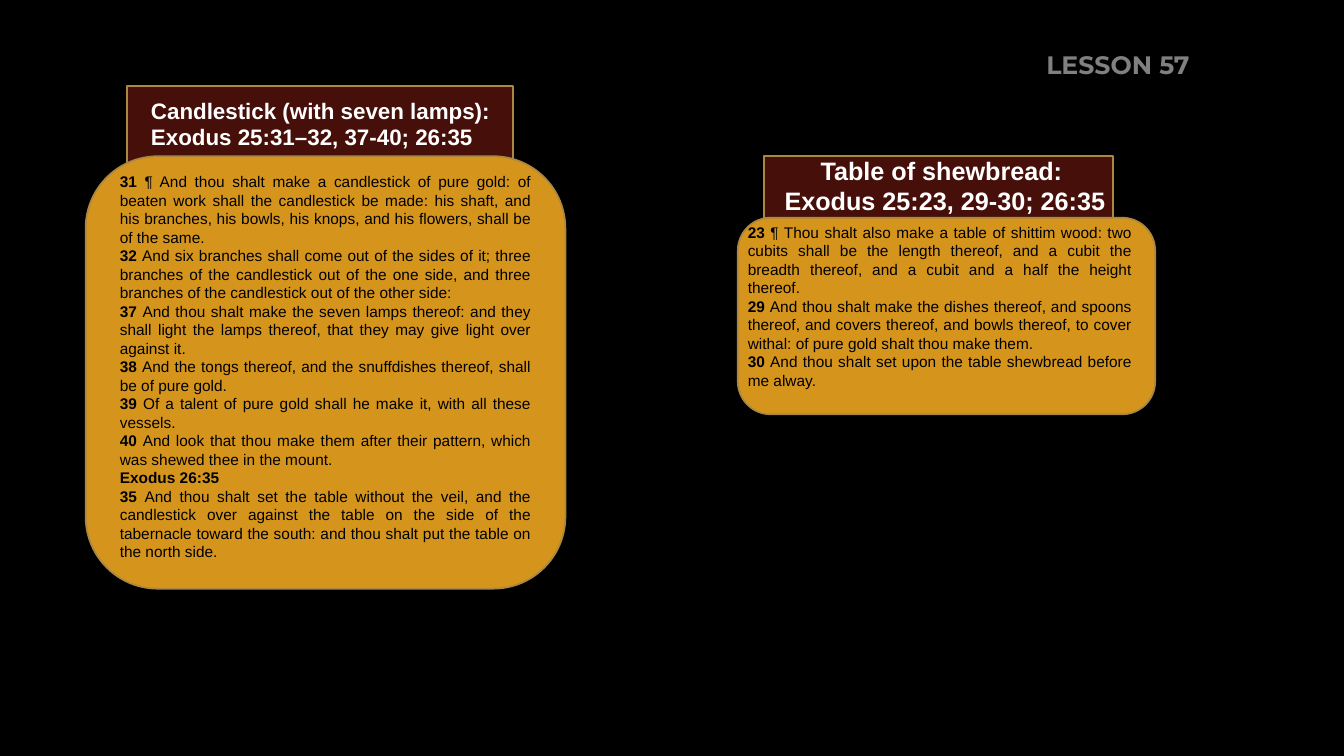
"""Build the Lesson 57 slide: two scripture panels on black."""
from dataclasses import dataclass
from typing import NamedTuple

from pptx import Presentation
from pptx.dml.color import RGBColor
from pptx.enum.shapes import MSO_SHAPE as Preset
from pptx.enum.text import MSO_ANCHOR as Anchor, MSO_AUTO_SIZE as AutoSize, PP_ALIGN as Align
from pptx.util import Pt

COLOURS = {
    "background": "000000",
    "banner": "460F0A",
    "panel": "D5951C",
    "outline": "AC8741",
    "lesson": "808080",
    "heading": "FFFFFF",
    "verse": "000000",
}
LINE_FACTOR = 1.2
VERSE_SIZE = 11


class Frame(NamedTuple):
    left: float
    top: float
    width: float
    height: float


class Verse(NamedTuple):
    label: str
    text: str = ""


@dataclass(frozen=True)
class Passage:
    banner: Frame
    panel: Frame
    heading_frame: Frame
    heading: tuple[str, ...]
    heading_size: int
    heading_align: Align
    verse_frame: Frame
    verses: tuple[Verse, ...]


SHEWBREAD = Passage(
    banner=Frame(545.76, 111.6, 249.12, 43.92),
    panel=Frame(527.04, 155.52, 298.08, 140.4),
    heading_frame=Frame(547.2, 107.28, 250.56, 51.12),
    heading=("Table of shewbread:", " Exodus 25:23, 29-30; 26:35"),
    heading_size=18,
    heading_align=Align.CENTER,
    verse_frame=Frame(527.04, 155.52, 288.72, 140.4),
    verses=(
        Verse("23 ", "¶ Thou shalt also make a table of shittim wood: two cubits shall be the length "
              "thereof, and a cubit the breadth thereof, and a cubit and a half the height thereof."),
        Verse("29 ", "And thou shalt make the dishes thereof, and spoons thereof, and covers thereof, "
              "and bowls thereof, to cover withal: of pure gold shalt thou make them."),
        Verse("30 ", "And thou shalt set upon the table shewbread before me alway."),
    ),
)

CANDLESTICK = Passage(
    banner=Frame(90.72, 61.2, 275.76, 58.32),
    panel=Frame(61.2, 111.6, 342.72, 308.88),
    heading_frame=Frame(100.8, 65.52, 264.24, 46.08),
    heading=("Candlestick (with seven lamps):", "Exodus 25:31–32, 37-40; 26:35"),
    heading_size=16,
    heading_align=Align.LEFT,
    verse_frame=Frame(78.48, 119.52, 308.16, 287.28),
    verses=(
        Verse("31 ", "¶ And thou shalt make a candlestick of pure gold: of beaten work shall the "
              "candlestick be made: his shaft, and his branches, his bowls, his knops, and his "
              "flowers, shall be of the same."),
        Verse("32 ", "And six branches shall come out of the sides of it; three branches of the "
              "candlestick out of the one side, and three branches of the candlestick out of the "
              "other side:"),
        Verse("37 ", "And thou shalt make the seven lamps thereof: and they shall light the lamps "
              "thereof, that they may give light over against it."),
        Verse("38 ", "And the tongs thereof, and the snuffdishes thereof, shall be of pure gold."),
        Verse("39 ", "Of a talent of pure gold shall he make it, with all these vessels."),
        Verse("40 ", "And look that thou make them after their pattern, which was shewed thee in "
              "the mount."),
        Verse("Exodus 26:35"),
        Verse("35 ", "And thou shalt set the table without the veil, and the candlestick over "
              "against the table on the side of the tabernacle toward the south: and thou shalt "
              "put the table on the north side."),
    ),
)


def colour(name: str) -> RGBColor:
    return RGBColor.from_string(COLOURS[name])


def points(frame: Frame) -> list[Pt]:
    return [Pt(length) for length in frame]


def style(para, font_name: str, size: int, ink: str, align: Align) -> None:
    para.alignment = align
    para.font.name = font_name
    para.font.size = Pt(size)
    para.font.color.rgb = colour(ink)


def add_block(page, preset: Preset, frame: Frame, fill: str) -> None:
    block = page.shapes.add_shape(preset, *points(frame))
    block.shadow.inherit = False
    block.fill.solid()
    block.fill.fore_color.rgb = colour(fill)
    block.line.color.rgb = colour("outline")
    block.line.width = Pt(1.25)


def add_paragraphs(page, frame: Frame, count: int, wrap: bool) -> list:
    box = page.shapes.add_textbox(*points(frame))
    text = box.text_frame
    text.word_wrap = wrap
    text.auto_size = AutoSize.SHAPE_TO_FIT_TEXT
    return [text.paragraphs[0], *(text.add_paragraph() for _ in range(count - 1))]


def add_heading(page, passage: Passage) -> None:
    paras = add_paragraphs(page, passage.heading_frame, len(passage.heading), False)
    for para, line in zip(paras, passage.heading):
        para.add_run().text = line
        style(para, "Arial", passage.heading_size, "heading", passage.heading_align)
        para.font.bold = True
        para.line_spacing = Pt(passage.heading_size * LINE_FACTOR)


def add_verses(page, passage: Passage) -> None:
    paras = add_paragraphs(page, passage.verse_frame, len(passage.verses), True)
    for para, verse in zip(paras, passage.verses):
        span = para.add_run()
        span.text = verse.label
        span.font.bold = True
        if verse.text:
            para.add_run().text = verse.text
        style(para, "Arial", VERSE_SIZE, "verse", Align.JUSTIFY)
        para.line_spacing = Pt(VERSE_SIZE * LINE_FACTOR)


def add_passage(page, passage: Passage) -> None:
    add_block(page, Preset.RECTANGLE, passage.banner, "banner")
    add_block(page, Preset.ROUNDED_RECTANGLE, passage.panel, "panel")
    add_heading(page, passage)
    add_verses(page, passage)


def set_title(page, frame: Frame, label: str) -> None:
    title = page.shapes.title
    title.left, title.top, title.width, title.height = points(frame)
    text = title.text_frame
    text.text = label
    text.vertical_anchor = Anchor.TOP
    text.auto_size = AutoSize.NONE
    style(text.paragraphs[0], "Montserrat", 18, "lesson", Align.LEFT)
    text.paragraphs[0].font.bold = True


def main() -> None:
    deck = Presentation()
    deck.slide_width, deck.slide_height = Pt(960), Pt(540)
    page = deck.slides.add_slide(deck.slide_layouts[5])
    page.background.fill.solid()
    page.background.fill.fore_color.rgb = colour("background")
    set_title(page, Frame(740.16, 31.68, 148.32, 59.04), "LESSON 57")
    for passage in (SHEWBREAD, CANDLESTICK):
        add_passage(page, passage)
    deck.save("out.pptx")


if __name__ == "__main__":
    main()
